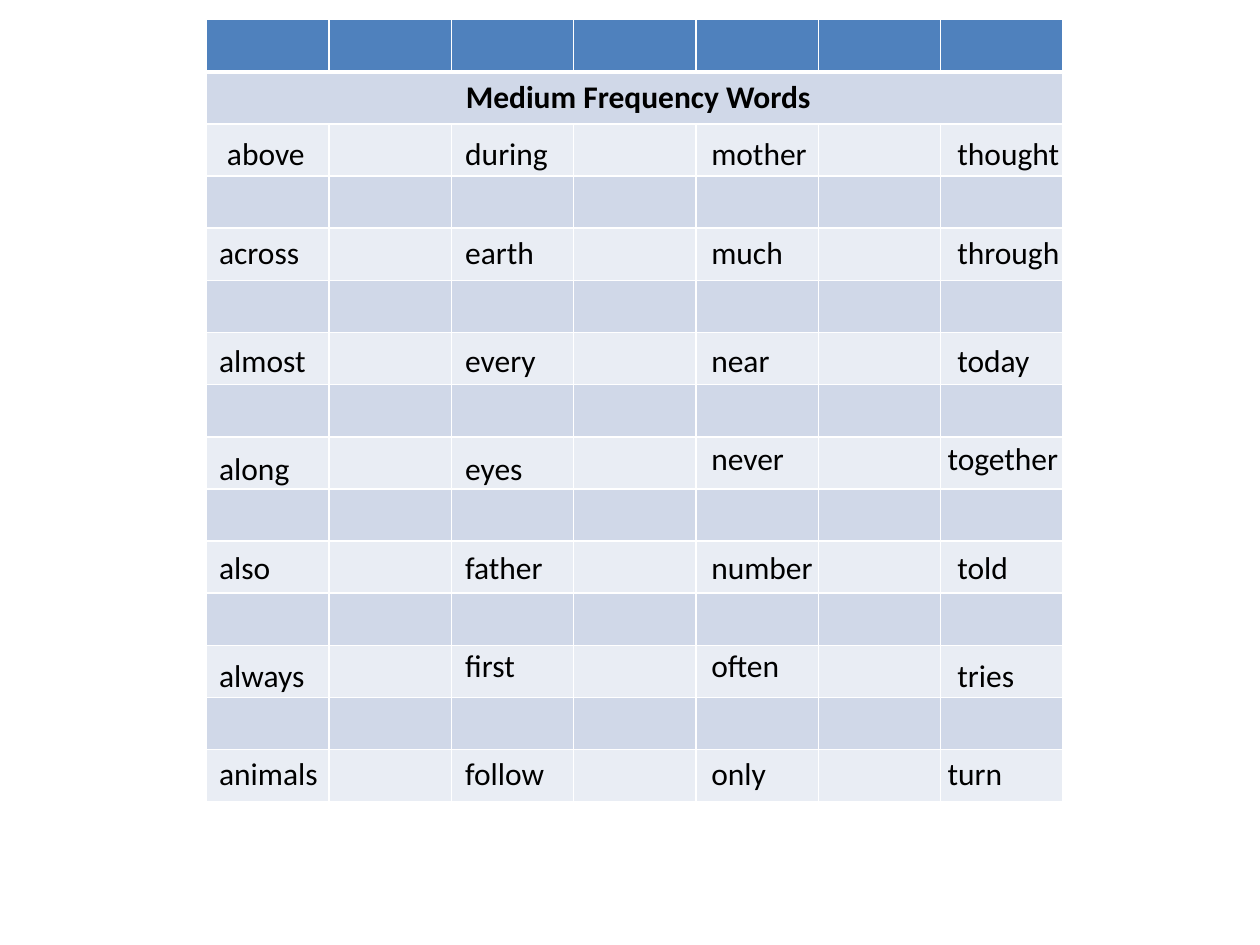
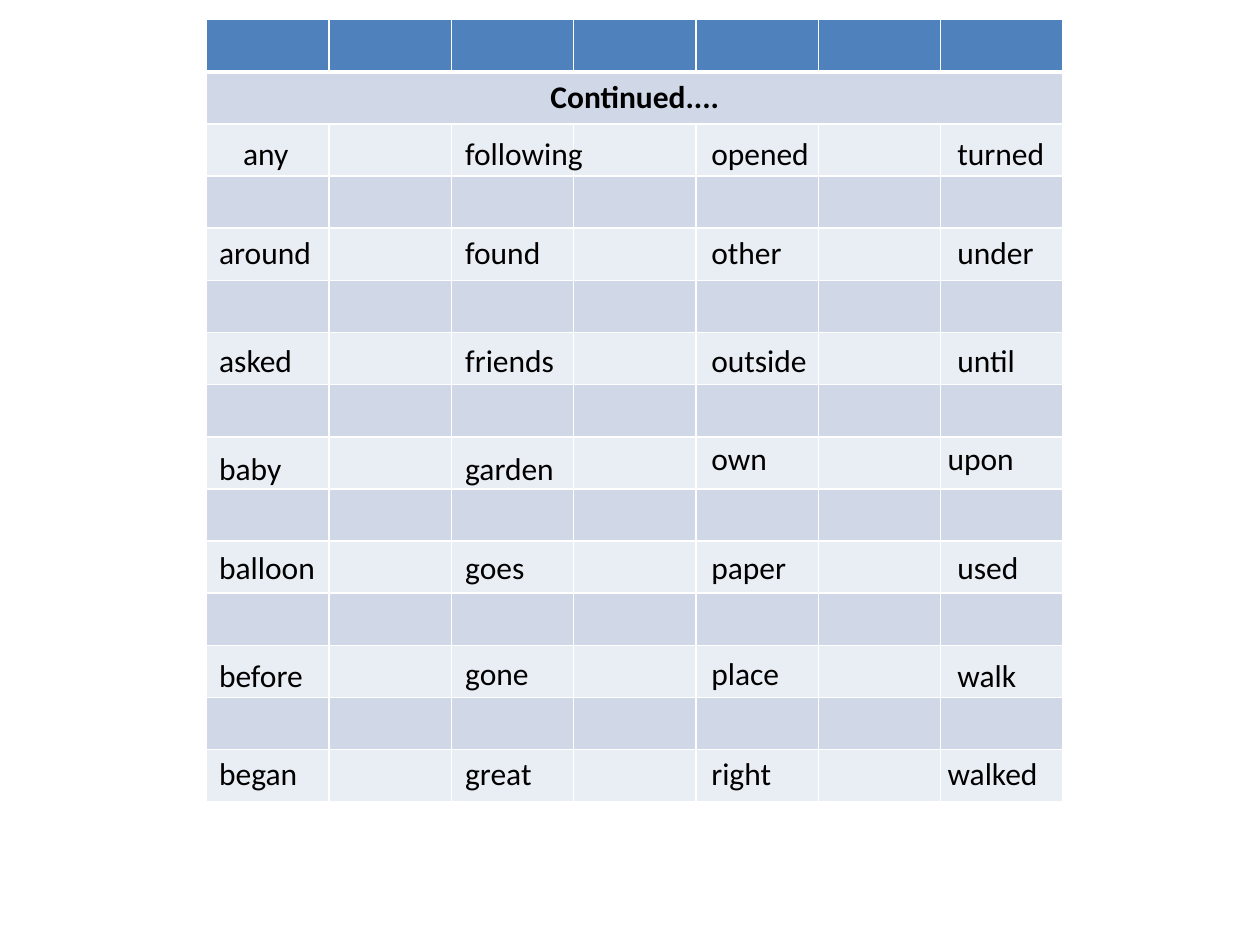
from pptx import Presentation
from pptx.dml.color import RGBColor as Rgb
from pptx.enum.text import MSO_AUTO_SIZE as Fit, PP_ALIGN as Align
from pptx.oxml.ns import qn
from pptx.util import Inches, Pt
from lxml.etree import SubElement as Sub

HUES = {"head": "4F81BD", "dark": "D0D8E8", "light": "E9EDF4",
        "line": "FFFFFF", "text": "000000"}
FONT, SIZE = "Calibri", 18

# The slide is a grid of 128 by 96 square units
WIDE, HIGH = Inches(10), Inches(7.5)
UNIT = WIDE / 128
BOX = (21, 2, 87, 79.5)          # table: left, top, width, height
ROWS, COLS = 15, 7

# Word boxes, in units from the corner of the table
LEFTS = (0, 25, 50, 75)
TOPS = (11, 21, 32, 43, 53, 64, 74)
SPAN, TALL = 12, 5.1

# Keys are (row, column) of a word: shared widths and shifts
SPANS = {(0, 2): 14, (0, 3): 14, (1, 3): 14, (3, 3): 16, (4, 2): 13, (6, 0): 15}
MOVES = {(3, 2): (0, -1), (3, 3): (-1, -1), (6, 3): (-1, 0)}

PAGES = [
    {"title": " Medium Frequency Words",
     "words": ["above during mother thought", "across earth much through",
               "almost every near today", "along eyes never together",
               "also father number told", "always first often tries",
               "animals follow only turn"],
     "spans": {},
     "moves": {(5, 1): (0, -1), (5, 2): (0, -1)}},
    {"title": "Continued....",
     "words": ["any following opened turned", "around found other under",
               "asked friends outside until", "baby garden own upon",
               "balloon goes paper used", "before gone place walk",
               "began great right walked"],
     "spans": {(0, 1): 16, (2, 2): 14, (4, 0): 14},
     "moves": {(5, 1): (0, -0.2), (5, 2): (0, -0.2)}},
]


def units(*nums):
    return [round(n * UNIT) for n in nums]


def write(frame, text, bold=False, mid=False):
    para = frame.paragraphs[0]
    para.alignment = Align.CENTER if mid else Align.LEFT
    run = para.add_run()
    run.text = text
    font = run.font
    font.name, font.size, font.bold = FONT, Pt(SIZE), bold
    font.color.rgb = Rgb.from_string(HUES["text"])


def edge(cell, side, width):
    line = Sub(cell._tc.get_or_add_tcPr(), qn("a:ln" + side), w=str(Pt(width)))
    Sub(Sub(line, qn("a:solidFill")), qn("a:srgbClr"), val=HUES["line"])


def paint(cell, row):
    # Borders come before the fill; a thick rule lies under the header
    thick = {(0, "B"), (1, "T")}
    for side in "LRTB":
        edge(cell, side, 3 if (row, side) in thick else 1)
    hue = "head" if row == 0 else "dark" if row % 2 else "light"
    cell.fill.solid()
    cell.fill.fore_color.rgb = Rgb.from_string(HUES[hue])


def add_grid(slide, box, title):
    left, top, width, height = units(*box)
    table = slide.shapes.add_table(ROWS, COLS, left, top, width, height).table
    for col in table.columns:
        col.width = width // COLS
    for row, line in enumerate(table.rows):
        line.height = height // ROWS
        for cell in line.cells:
            paint(cell, row)
    # Title row across all columns
    table.cell(1, 0).merge(table.cell(1, COLS - 1))
    write(table.cell(1, 0).text_frame, title, bold=True, mid=True)


def add_words(slide, box, words, spans, moves):
    for row, line in enumerate(words):
        for col, word in enumerate(line.split()):
            key = row, col
            across, down = moves.get(key, (0, 0))
            place = units(box[0] + LEFTS[col] + across, box[1] + TOPS[row] + down,
                          spans.get(key, SPAN), TALL)
            frame = slide.shapes.add_textbox(*place).text_frame
            frame.word_wrap = True
            frame.auto_size = Fit.SHAPE_TO_FIT_TEXT
            write(frame, word, mid=key == (0, 0))


def main():
    deck = Presentation()
    deck.slide_width, deck.slide_height = WIDE, HIGH
    for page in PAGES:
        slide = deck.slides.add_slide(deck.slide_layouts[6])
        add_grid(slide, BOX, page["title"])
        add_words(slide, BOX, page["words"], SPANS | page["spans"],
                  MOVES | page["moves"])
    deck.save("out.pptx")


if __name__ == "__main__":
    main()
